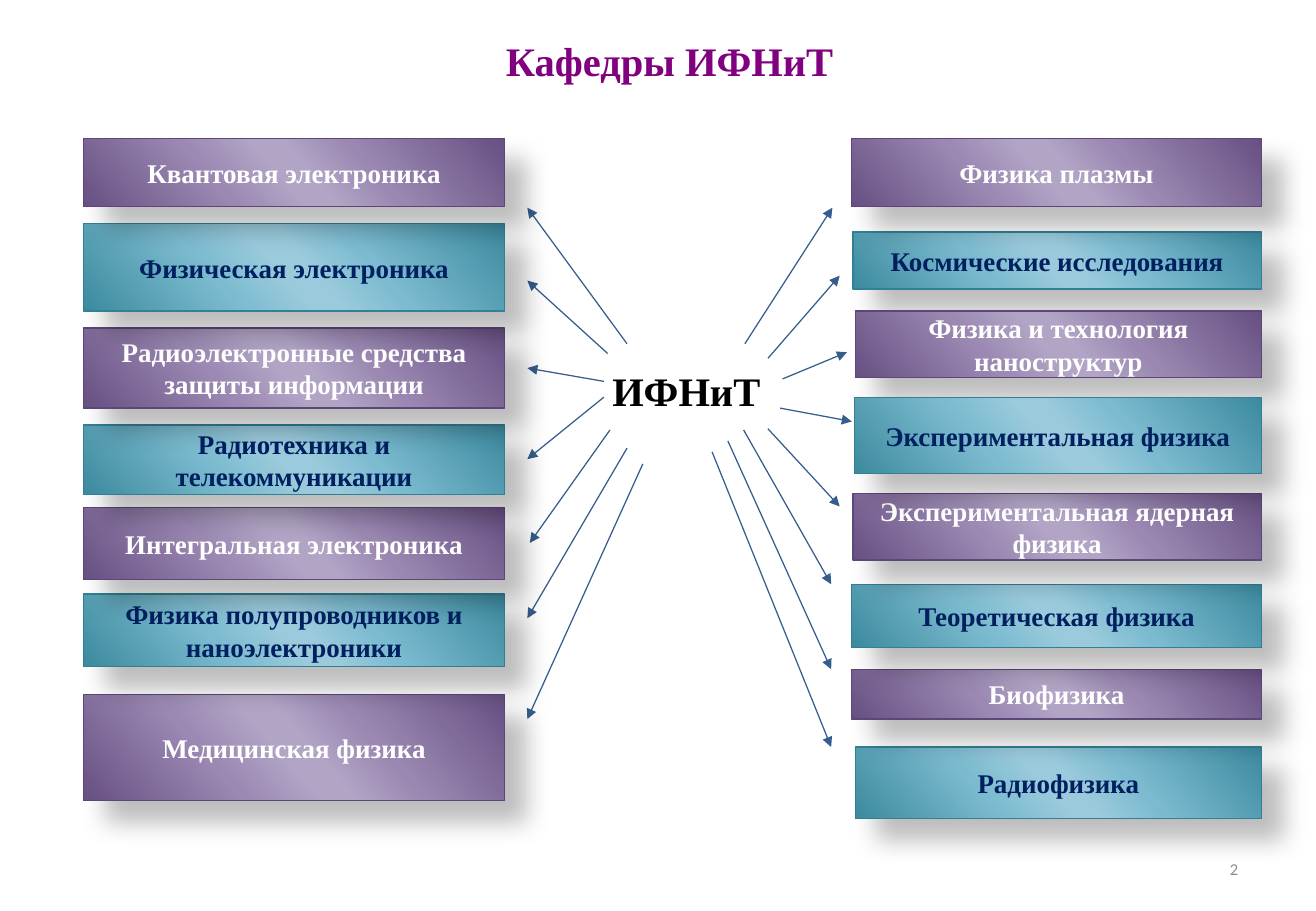
from lxml import etree
from pptx import Presentation
from pptx.dml.color import RGBColor
from pptx.enum.shapes import MSO_CONNECTOR as Link, MSO_SHAPE as Preset
from pptx.enum.text import MSO_ANCHOR as Anchor, PP_ALIGN as Align
from pptx.oxml import parse_xml
from pptx.oxml.ns import nsdecls, qn
from pptx.util import Inches, Pt

# Content; lengths are cells of a grid of 1083 columns by 750 rows
COLUMNS, ROWS = 1083, 750
TITLE, TITLE_BOX = "Кафедры ИФНиТ", (307, 25, 488, 50)
CENTRE, CENTRE_BOX = "ИФНиТ", (494, 296, 148, 50)
PAGE, PAGE_BOX = "2", (776, 695, 253, 40)

# Department, left, top, height, arrow start, arrow end
LEFT_SIDE = [
    ("Квантовая электроника", 69, 114, 56, (516, 283), (434, 171)),
    ("Физическая электроника", 69, 184, 72, (500, 291), (434, 231)),
    ("Радиоэлектронные средства защиты информации", 69, 270, 66, (497, 314), (434, 303)),
    ("Радиотехника и телекоммуникации", 69, 350, 57, (497, 327), (434, 378)),
    ("Интегральная электроника", 69, 418, 59, (502, 354), (436, 447)),
    ("Физика полупроводников и наноэлектроники", 69, 489, 60, (516, 369), (434, 509)),
    ("Медицинская физика", 69, 572, 87, (529, 382), (434, 592)),
]
RIGHT_SIDE = [
    ("Физика плазмы", 701, 114, 56, (613, 283), (685, 171)),
    ("Космические исследования", 702, 191, 47, (632, 295), (691, 227)),
    ("Физика и технология наноструктур", 704, 256, 55, (644, 312), (697, 290)),
    ("Экспериментальная физика", 703, 327, 63, (642, 336), (701, 347)),
    ("Экспериментальная ядерная физика", 702, 406, 55, (632, 353), (691, 417)),
    ("Теоретическая физика", 701, 481, 52, (612, 354), (684, 481)),
    ("Биофизика", 701, 551, 41, (599, 363), (684, 551)),
    ("Радиофизика", 704, 615, 59, (586, 372), (684, 615)),
]
# Departments, right edge, stacking order from back to front
SIDES = [
    (LEFT_SIDE, 415, (6, 5, 4, 3, 2, 1, 0)),
    (RIGHT_SIDE, 1038, (1, 2, 7, 6, 5, 4, 3, 0)),
]

# Formats
PURPLE_TITLE = RGBColor(0x80, 0x00, 0x80)
BLACK = RGBColor(0x00, 0x00, 0x00)
GREY = RGBColor(0x8C, 0x8C, 0x8C)
ARROW_BLUE = RGBColor(0x35, 0x5D, 0x8D)
STOPS = (0, 33, 47, 53, 68, 100)
PURPLE = {
    "text": RGBColor(0xFF, 0xFF, 0xFF),
    "edge": RGBColor(0x5D, 0x46, 0x78),
    "shades": [RGBColor.from_string(c) for c in
               ("675082", "9A88B2", "B1A4C5", "B1A4C5", "9B89B3", "675082")],
}
TEAL = {
    "text": RGBColor(0x00, 0x20, 0x60),
    "edge": RGBColor(0x32, 0x80, 0x94),
    "shades": [RGBColor.from_string(c) for c in
               ("3C8A9F", "7BBACF", "9ACADC", "9ACADC", "7CBBCF", "3C8A9F")],
}
SERIF = {"name": "Times New Roman", "bold": True}

deck = Presentation()
deck.slide_width, deck.slide_height = Inches(10.83), Inches(7.5)
CELL_W, CELL_H = deck.slide_width / COLUMNS, deck.slide_height / ROWS
slide = deck.slides.add_slide(deck.slide_layouts[5])


def place(x, y):
    return round(x * CELL_W), round(y * CELL_H)


def area(left, top, width, height):
    return *place(left, top), *place(width, height)


def write(holder, text, align, color, size, **font_format):
    frame = holder.text_frame
    frame.word_wrap, frame.vertical_anchor = True, Anchor.MIDDLE
    paragraph = frame.paragraphs[0]
    paragraph.alignment = align
    run = paragraph.add_run()
    run.text = text
    run.font.color.rgb, run.font.size = color, Pt(size)
    for key, value in font_format.items():
        setattr(run.font, key, value)
    return run


def add_arrow(start, end):
    arrow = slide.shapes.add_connector(Link.STRAIGHT, *place(*start), *place(*end))
    arrow.line.color.rgb, arrow.line.width = ARROW_BLUE, Pt(0.75)
    etree.SubElement(arrow.line._get_or_add_ln(), qn("a:tailEnd"), type="triangle")
    etree.SubElement(arrow._element.spPr, qn("a:effectLst"))


def add_department(name, left, top, width, height, theme):
    box = slide.shapes.add_shape(Preset.RECTANGLE, *area(left, top, width, height))
    box.line.color.rgb, box.line.width = theme["edge"], Pt(0.75)
    stops = "".join(f'<a:gs pos="{pos * 1000}"><a:srgbClr val="{shade}"/></a:gs>'
                    for pos, shade in zip(STOPS, theme["shades"]))
    properties = box._element.spPr
    properties.find(qn("a:prstGeom")).addnext(parse_xml(
        f'<a:gradFill {nsdecls("a")}><a:gsLst>{stops}</a:gsLst>'
        f'<a:lin ang="{139 * 60000}" scaled="0"/></a:gradFill>'))
    properties.append(parse_xml(
        f'<a:effectLst {nsdecls("a")}><a:outerShdw blurRad="{Pt(15)}" dist="{Pt(18)}" '
        f'dir="{45 * 60000}" algn="ctr" rotWithShape="0"><a:srgbClr val="{BLACK}">'
        '<a:alpha val="26000"/></a:srgbClr></a:outerShdw></a:effectLst>'))
    write(box, name, Align.CENTER, theme["text"], 16, **SERIF)


# Title
title = slide.shapes.title
title.left, title.top, title.width, title.height = area(*TITLE_BOX)
write(title, TITLE, Align.CENTER, PURPLE_TITLE, 24, **SERIF)

# Arrows from the institute to its departments
for departments, _, _ in SIDES:
    for *_, start, end in departments:
        add_arrow(start, end)

# Departments, in alternating colours
for departments, right, stacking in SIDES:
    for row in stacking:
        name, left, top, height, *_ = departments[row]
        add_department(name, left, top, right - left, height, (PURPLE, TEAL)[row % 2])

# Institute in the centre
institute = slide.shapes.add_textbox(*area(*CENTRE_BOX))
write(institute, CENTRE, Align.LEFT, BLACK, 24, **SERIF)

# Slide number
number = slide.shapes.add_textbox(*area(*PAGE_BOX))
write(number, PAGE, Align.RIGHT, GREY, 9.8, name="Calibri")

deck.save("out.pptx")
